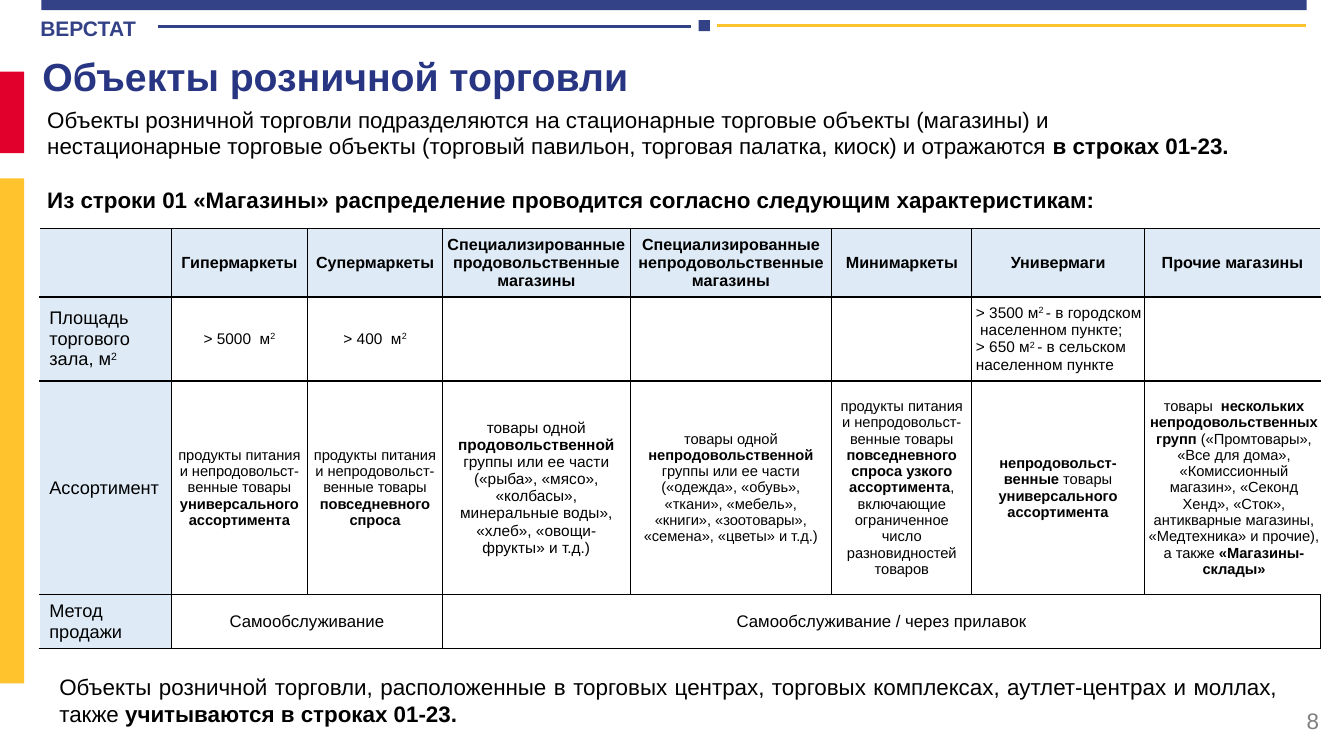
from lxml import etree
from pptx import Presentation
from pptx.dml.color import RGBColor
from pptx.enum.shapes import MSO_CONNECTOR as Link, MSO_SHAPE as Form
from pptx.enum.text import MSO_ANCHOR as Anchor, MSO_AUTO_SIZE as Fit, PP_ALIGN as Align
from pptx.oxml.ns import qn
from pptx.util import Inches, Pt

BLUE = RGBColor(0x33, 0x42, 0x86)
NAVY = RGBColor(0x28, 0x35, 0x83)
RED = RGBColor(0xE1, 0x00, 0x2B)
GOLD = RGBColor(0xFF, 0xC3, 0x2E)
PALE = RGBColor(0xDE, 0xEB, 0xF7)
WHITE = RGBColor(0xFF, 0xFF, 0xFF)
BLACK = RGBColor(0, 0, 0)
GRAY = RGBColor(0x80, 0x80, 0x80)

COLS = [1.31, 1.35, 1.34, 1.86, 2, 1.39, 1.71, 1.75]
ROWS = [0.64, 0.78, 2.12, 0.5]

# Table text: *bold*, ^superscript^
HEADS = ["", "Гипермаркеты", "Супермаркеты",
         "Специализированные продовольственные магазины",
         "Специализированные непродовольственные магазины",
         "Минимаркеты", "Универмаги", "Прочие магазины"]
AREAS = ["Площадь торгового зала, м^2^", "> 5000  м^2^", "> 400  м^2^", "", "", "",
         "> 3500 м^2 ^- в городском  населенном пункте;\n"
         "> 650 м^2 ^- в сельском населенном пункте", ""]
GOODS = ["Ассортимент",
         "продукты питания и непродовольст-венные товары *универсального ассортимента*",
         "продукты питания и непродовольст-венные товары *повседневного спроса*",
         "товары одной *продовольственной* группы или ее части («рыба», «мясо», "
         "«колбасы», минеральные воды», «хлеб», «овощи-фрукты» и т.д.)",
         "товары одной *непродовольственной *группы или ее части («одежда», «обувь», "
         "«ткани», «мебель», «книги», «зоотовары», «семена», «цветы» и т.д.)",
         "продукты питания и непродовольст-венные товары *повседневного спроса узкого "
         "ассортимента*, включающие ограниченное число разновидностей товаров",
         "*непродовольст-венные *товары *универсального ассортимента*",
         "товары  *нескольких непродовольственных групп* («Промтовары», «Все для дома», "
         "«Комиссионный магазин», «Секонд Хенд», «Сток», антикварные магазины, "
         "«Медтехника» и прочие), а также *«Магазины-склады»*"]
SALES = ["Метод продажи", "Самообслуживание", "",
         "Самообслуживание / через прилавок", "", "", "", ""]


def write(para, text, size, color=BLACK, bold=None, align=Align.LEFT):
    """Fill a paragraph, reading the bold and superscript marks."""
    para.alignment = align
    font = para.font
    font.name, font.size, font.bold = "Arial", Pt(size), bold
    font.color.rgb = color
    for i, part in enumerate(text.split("*")):
        for j, bit in enumerate(part.split("^")):
            if not bit:
                continue
            run = para.add_run()
            run.text = bit
            if i % 2:
                run.font.bold = True
            if j % 2:
                run.font._element.set("baseline", "30000")


def add_text(slide, box, anchor=Anchor.TOP):
    frame = slide.shapes.add_textbox(*map(Inches, box)).text_frame
    frame.word_wrap = True
    frame.vertical_anchor = anchor
    return frame


def add_bar(slide, box, color):
    bar = slide.shapes.add_shape(Form.RECTANGLE, *map(Inches, box))
    bar.shadow.inherit = False
    bar.fill.solid()
    bar.fill.fore_color.rgb = color
    bar.line.fill.background()


def add_rule(slide, left, right, top, color):
    rule = slide.shapes.add_connector(
        Link.STRAIGHT, Inches(left), Inches(top), Inches(right), Inches(top))
    rule.line.color.rgb = color
    rule.line.width = Pt(2)
    etree.SubElement(rule._element.spPr, qn("a:effectLst"))


def add_edges(cell, sides):
    props = cell._tc.get_or_add_tcPr()
    for side in sides:
        line = etree.SubElement(props, qn("a:ln" + side), w=str(Pt(1)))
        fill = etree.SubElement(line, qn("a:solidFill"))
        etree.SubElement(fill, qn("a:srgbClr"), val=str(BLACK))


def add_grid(slide):
    grid = slide.shapes.add_table(
        len(ROWS), len(COLS), Inches(0.39), Inches(2.27),
        Inches(sum(COLS)), Inches(sum(ROWS))).table
    grid.first_row = grid.horz_banding = False
    for col, width in zip(grid.columns, COLS):
        col.width = Inches(width)
    for row, height in zip(grid.rows, ROWS):
        row.height = Inches(height)
    for r, texts in enumerate([HEADS, AREAS, GOODS, SALES]):
        for c, text in enumerate(texts):
            cell = grid.cell(r, c)
            # Outer left and right sides stay open
            add_edges(cell, ("L" if c else "") + ("R" if c < len(COLS) - 1 else "") + "TB")
            cell.fill.solid()
            cell.fill.fore_color.rgb = PALE if r == 0 or c == 0 else WHITE
            cell.vertical_anchor = Anchor.MIDDLE
            size = 13 if c == 0 else [11.5, 11, 11 if c == 3 else 10.5, 12][r]
            align = Align.LEFT if c == 0 or (r, c) == (1, 6) else Align.CENTER
            if c and r in (0, 2):
                side = 0.02 if r == 0 else 0.05
                cell.margin_left = cell.margin_right = Inches(side)
            if (r, c) in ((1, 6), (2, 7)):
                cell.margin_left, cell.margin_right = Inches(0.04), Inches(0.01)
            for i, line in enumerate(text.split("\n")):
                frame = cell.text_frame
                para = frame.add_paragraph() if i else frame.paragraphs[0]
                write(para, line, size, bold=r == 0, align=align)
    grid.cell(3, 1).merge(grid.cell(3, 2))
    grid.cell(3, 3).merge(grid.cell(3, 7))


def add_title(slide):
    title = slide.shapes.title
    title.left, title.top, title.width, title.height = map(Inches, (0.32, 0.47, 12.98, 0.74))
    frame = title.text_frame
    frame.auto_size = Fit.NONE
    frame.vertical_anchor = Anchor.TOP
    write(frame.paragraphs[0], "Объекты розничной торговли", 28, NAVY, True)


def add_intro(slide):
    frame = add_text(slide, (0.37, 1, 12.41, 1.2))
    para = frame.paragraphs[0]
    write(para, "Объекты розничной торговли подразделяются на стационарные "
          "торговые объекты (магазины) и", 16)
    para.add_line_break()
    write(para, "нестационарные торговые объекты (торговый павильон, торговая палатка, "
          "киоск) и отражаются *в строках 01-23.*", 16)
    para = frame.add_paragraph()
    para.space_before = Pt(19)
    write(para, "Из строки 01 «Магазины» распределение проводится согласно "
          "следующим характеристикам:", 16, bold=True, align=Align.JUSTIFY)


def main():
    deck = Presentation()
    deck.slide_width, deck.slide_height = Inches(13.33), Inches(7.5)
    slide = deck.slides.add_slide(deck.slide_layouts[5])

    # Frame bars and header rules
    add_bar(slide, (0.41, 0, 12.55, 0.1), BLUE)
    add_bar(slide, (0, 0.71, 0.24, 0.81), RED)
    add_bar(slide, (0, 1.77, 0.24, 5.01), GOLD)
    add_rule(slide, 1.57, 6.85, 0.26, BLUE)
    add_rule(slide, 7.11, 12.95, 0.25, GOLD)
    add_bar(slide, (6.93, 0.2, 0.11, 0.11), BLUE)
    name = add_text(slide, (0.4, 0.15, 1.15, 0.3))
    name.margin_left = name.margin_right = name.margin_top = name.margin_bottom = 0
    write(name.paragraphs[0], "ВЕРСТАТ", 15, BLUE, True)

    # Title, intro and table
    add_title(slide)
    add_intro(slide)
    add_grid(slide)

    # Closing note and page number
    note = add_text(slide, (0.49, 6.63, 12.28, 0.64))
    write(note.paragraphs[0], "Объекты розничной торговли, расположенные в торговых центрах, "
          "торговых комплексах, аутлет-центрах и моллах, также "
          "*учитываются в строках 01-23.*", 16, align=Align.JUSTIFY)
    page = add_text(slide, (10.18, 6.95, 3, 0.4), Anchor.MIDDLE)
    write(page.paragraphs[0], "8", 16, GRAY, align=Align.RIGHT)

    deck.save("out.pptx")


if __name__ == "__main__":
    main()
